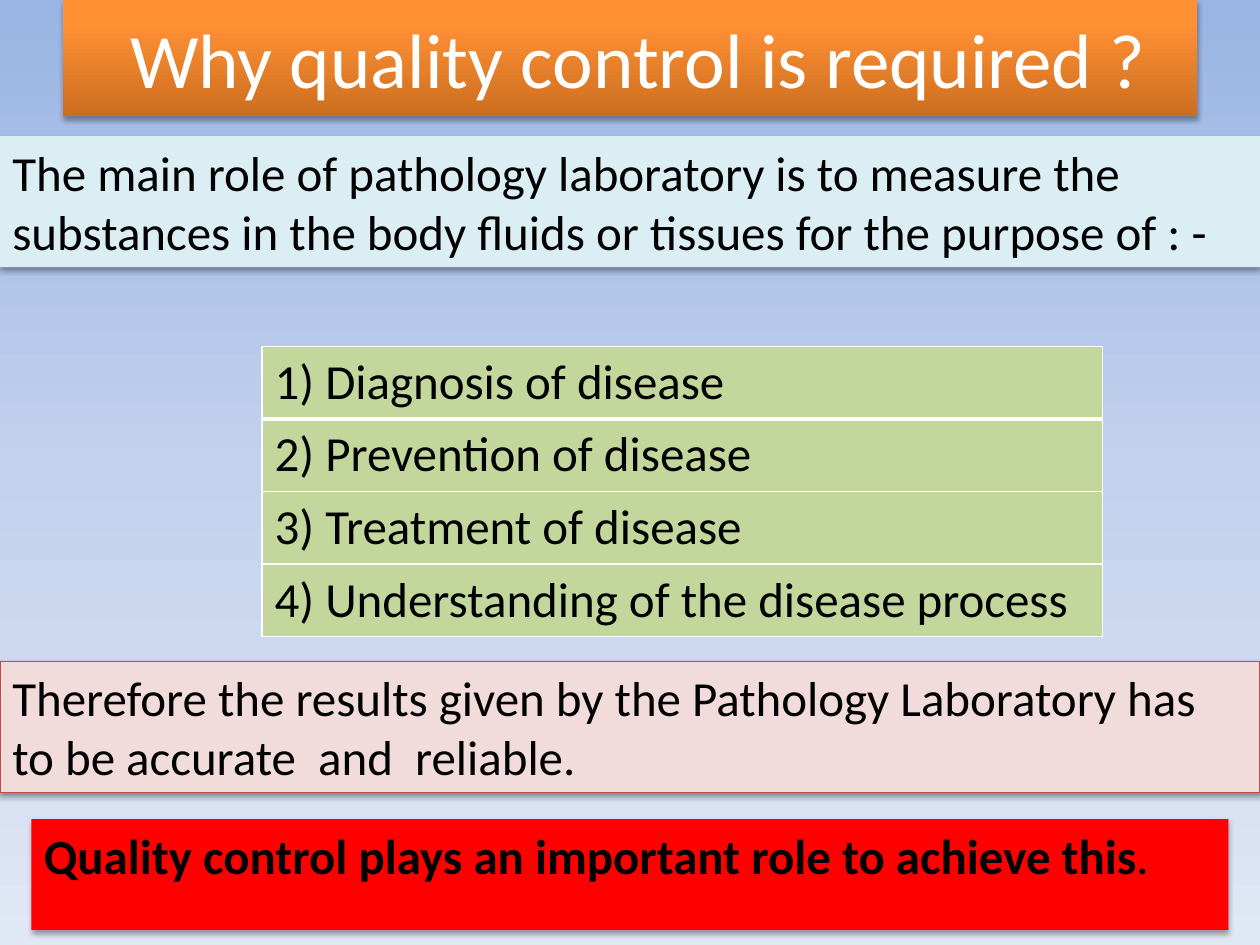
from dataclasses import dataclass

from lxml import etree
from pptx import Presentation
from pptx.dml.color import RGBColor
from pptx.enum.shapes import MSO_SHAPE
from pptx.enum.text import MSO_ANCHOR, PP_ALIGN
from pptx.oxml.ns import qn
from pptx.util import Inches, Pt

RECTANGLE = MSO_SHAPE.RECTANGLE
TOP, MIDDLE = MSO_ANCHOR.TOP, MSO_ANCHOR.MIDDLE
LEFT, CENTER = PP_ALIGN.LEFT, PP_ALIGN.CENTER


@dataclass(frozen=True)
class Theme:
    font: str = "Calibri"
    title_size: int = 44
    body_size: int = 28
    title_text: str = "FFFFFF"
    body_text: str = "000000"
    background: tuple = ((0, "9AB5E4"), (50, "C2D1ED"), (100, "E1E8F5"))
    title_fill: tuple = ((0, "CC6E20"), (80, "FF9034"), (100, "FF9136"))
    role_fill: str = "DBEEF4"
    result_fill: str = "F2DCDB"
    result_line: str = "BF4C48"
    conclusion_fill: str = "FF0000"
    purpose_fill: str = "C3D69B"
    purpose_border: str = "FFFFFF"
    shadow: str = "000000"


THEME = Theme()

PURPOSES = (
    "1) Diagnosis of disease",
    "2) Prevention of disease",
    "3) Treatment of disease",
    "4) Understanding of the disease process",
)


def add_color(parent, color):
    return etree.SubElement(parent, qn("a:srgbClr"), val=color)


def set_gradient(fill, owner, stops, angle):
    """Fill with any number of (percent, colour) stops; owner holds the fill's XML."""
    fill.gradient()
    fill.gradient_angle = angle
    stop_list = next(owner.iter(qn("a:gsLst")))
    for old_stop in list(stop_list):
        stop_list.remove(old_stop)
    for percent, color in stops:
        stop = etree.SubElement(stop_list, qn("a:gs"), pos=str(percent * 1000))
        add_color(stop, color)


def set_shadow(shape, opacity=35, distance=1.8):
    shape.shadow.inherit = False
    effects = shape.element.spPr.find(qn("a:effectLst"))
    shadow = etree.SubElement(
        effects, qn("a:outerShdw"), blurRad=str(Pt(3.1)), dist=str(Pt(distance)),
        dir="5400000", rotWithShape="0")
    etree.SubElement(add_color(shadow, THEME.shadow), qn("a:alpha"),
                     val=str(opacity * 1000))


def format_run(run, size, color, bold=False):
    run.font.name = THEME.font
    run.font.size = Pt(size)
    run.font.bold = bold
    run.font.color.rgb = RGBColor.from_string(color)


def add_panel(slide, box, text, size=THEME.body_size, color=THEME.body_text,
              align=LEFT, anchor=TOP, bold=False):
    panel = slide.shapes.add_shape(RECTANGLE, *map(Inches, box))
    panel.line.fill.background()
    frame = panel.text_frame
    frame.word_wrap = True
    frame.vertical_anchor = anchor
    frame.text = text
    paragraph = frame.paragraphs[0]
    paragraph.alignment = align
    format_run(paragraph.runs[0], size, color, bold)
    return panel


def set_solid(fill, color):
    fill.solid()
    fill.fore_color.rgb = RGBColor.from_string(color)


def set_borders(cell, top, bottom):
    properties = cell._tc.get_or_add_tcPr()
    widths = {"a:lnL": 1, "a:lnR": 1, "a:lnT": top, "a:lnB": bottom}
    for index, (side, width) in enumerate(widths.items()):
        border = etree.Element(qn(side), w=str(Pt(width)))
        add_color(etree.SubElement(border, qn("a:solidFill")), THEME.purpose_border)
        properties.insert(index, border)


def add_purpose_table(slide, box):
    table = slide.shapes.add_table(len(PURPOSES), 1, *map(Inches, box)).table
    table.first_row = False
    table.horz_banding = False
    for index, purpose in enumerate(PURPOSES):
        cell = table.cell(index, 0)
        cell.text = purpose
        format_run(cell.text_frame.paragraphs[0].runs[0],
                   THEME.body_size, THEME.body_text)
        set_solid(cell.fill, THEME.purpose_fill)
        set_borders(cell, top=3 if index == 1 else 1, bottom=3 if index == 0 else 1)


def main():
    presentation = Presentation()
    presentation.slide_width, presentation.slide_height = Inches(10), Inches(7.5)
    slide = presentation.slides.add_slide(presentation.slide_layouts[6])
    set_gradient(slide.background.fill, slide.element, THEME.background, 270)

    title = add_panel(slide, (0.5, 0, 9, 0.92), " Why quality control is required ?",
                      THEME.title_size, THEME.title_text, CENTER, MIDDLE)
    set_gradient(title.fill, title.element, THEME.title_fill, 90)
    set_shadow(title)

    add_purpose_table(slide, (2.08, 2.75, 6.67, 2.16))

    role = add_panel(
        slide, (0, 1.08, 10, 1.04),
        "The main role of pathology laboratory is to measure the substances "
        "in the body fluids or tissues for the purpose of : -")
    set_solid(role.fill, THEME.role_fill)
    set_shadow(role)

    result = add_panel(
        slide, (0, 5.25, 10, 1.04),
        "Therefore the results given by the Pathology Laboratory has "
        "to be accurate  and  reliable.")
    set_solid(result.fill, THEME.result_fill)
    result.line.color.rgb = RGBColor.from_string(THEME.result_line)
    result.line.width = Pt(0.75)
    set_shadow(result, opacity=38, distance=1.6)

    conclusion = add_panel(
        slide, (0.25, 6.5, 9.5, 0.88),
        "Quality control plays an important role to achieve this", bold=True)
    full_stop = conclusion.text_frame.paragraphs[0].add_run()
    full_stop.text = "."
    format_run(full_stop, THEME.body_size, THEME.body_text)
    set_solid(conclusion.fill, THEME.conclusion_fill)
    set_shadow(conclusion)

    presentation.save("out.pptx")


if __name__ == "__main__":
    main()
